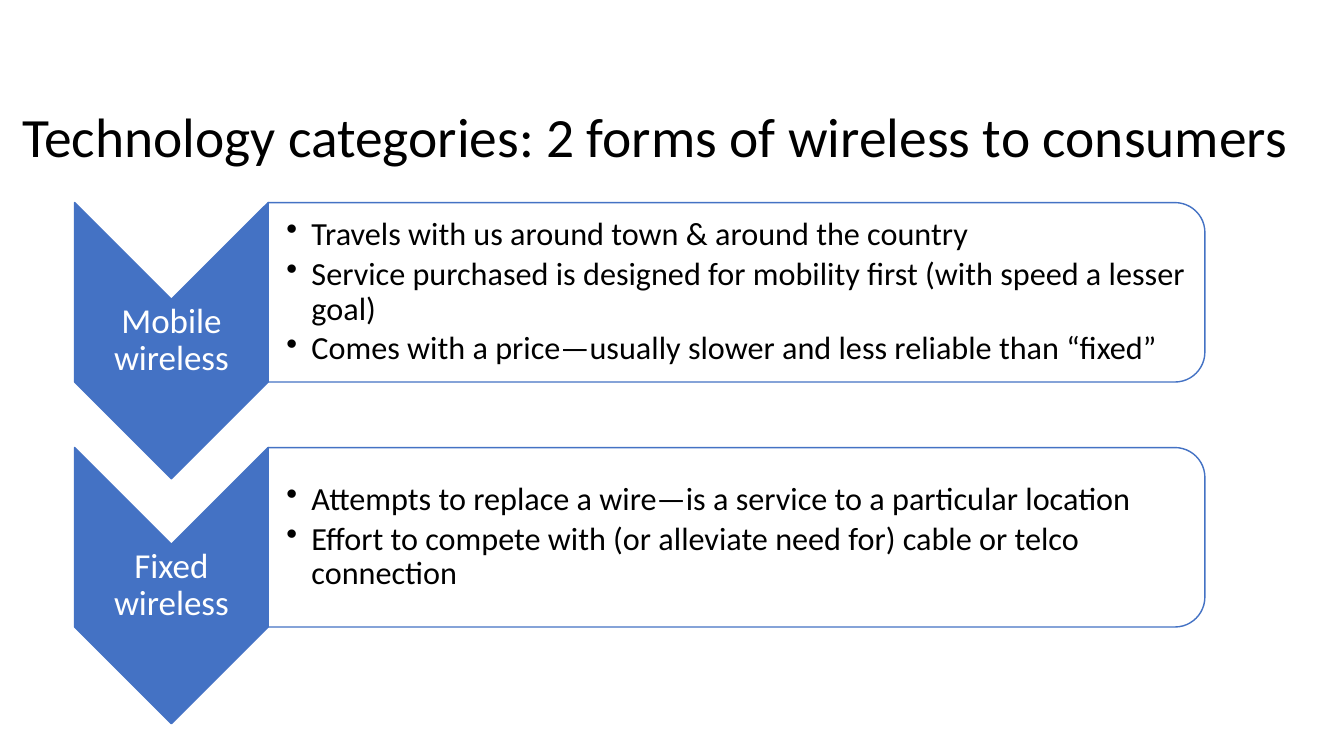
import dataclasses

import lxml.etree
import pptx
import pptx.dml.color
import pptx.enum.shapes
import pptx.enum.text
import pptx.oxml.ns
import pptx.util

Inches = pptx.util.Inches
Pt = pptx.util.Pt
RGB = pptx.dml.color.RGBColor
SHAPE = pptx.enum.shapes.MSO_SHAPE
ALIGN = pptx.enum.text.PP_ALIGN
qn = pptx.oxml.ns.qn


@dataclasses.dataclass(frozen=True)
class Theme:
    font: str = "Calibri"
    accent: RGB = RGB(0x44, 0x72, 0xC4)
    white: RGB = RGB(0xFF, 0xFF, 0xFF)
    black: RGB = RGB(0, 0, 0)
    title: float = 39.6
    label: float = 25
    body: float = 23


THEME = Theme()
TITLE = "Technology categories: 2 forms of wireless to consumers"
CATEGORIES = [
    ("Mobile wireless", [
        "Travels with us around town & around the country",
        "Service purchased is designed for mobility first (with speed a lesser goal)",
        "Comes with a price—usually slower and less reliable than “fixed”",
    ]),
    ("Fixed wireless", [
        "Attempts to replace a wire—is a service to a particular location",
        "Effort to compete with (or alleviate need for) cable or telco connection",
    ]),
]
CHEVRON_W, CHEVRON_H = 1.92, 2.74
PANEL_W, PANEL_H = 9.29, 1.78
ROW_PITCH = 2.43


def set_format(obj, values):
    for name, value in values.items():
        setattr(obj, name, value)


def write_text(tf, lines, size, color, align, space_after=0, left_inset=0.02):
    """Fill a middle-anchored frame with one paragraph per line."""
    inset = Inches(0.02)
    set_format(tf, {
        "word_wrap": True, "vertical_anchor": pptx.enum.text.MSO_ANCHOR.MIDDLE,
        "margin_left": Inches(left_inset), "margin_right": inset,
        "margin_top": inset, "margin_bottom": inset,
    })
    for i, line in enumerate(lines):
        p = tf.paragraphs[0] if i == 0 else tf.add_paragraph()
        set_format(p, {"alignment": align, "line_spacing": 0.9,
                       "space_before": Pt(0), "space_after": Pt(space_after)})
        r = p.add_run()
        r.text = line
        set_format(r.font, {"name": THEME.font, "size": Pt(size)})
        r.font.color.rgb = color


def add_bullets(tf):
    for p in tf.paragraphs:
        p.level = 1
        pPr = p._p.get_or_add_pPr()
        pPr.set("marL", str(Inches(0.25)))
        pPr.set("indent", str(-Inches(0.25)))
        lxml.etree.SubElement(pPr, qn("a:buChar"), char="•")


def add_turned_shape(shapes, kind, left, top, width, height, fill):
    """Add a shape turned a quarter clockwise that covers the given box."""
    shift = (width - height) / 2
    sp = shapes.add_shape(kind, Inches(left + shift), Inches(top - shift),
                          Inches(height), Inches(width))
    sp.rotation = 90
    sp.shadow.inherit = False
    sp.fill.solid()
    sp.fill.fore_color.rgb = fill
    sp.line.color.rgb = THEME.accent
    sp.line.width = Pt(1)
    return sp


def add_title(s, left, top, width, height):
    sp = s.shapes.title
    set_format(sp, {"left": Inches(left), "top": Inches(top),
                    "width": Inches(width), "height": Inches(height)})
    write_text(sp.text_frame, [TITLE], THEME.title, THEME.black, ALIGN.LEFT,
               left_inset=0.1)


def add_category(s, left, top, label, bullets):
    shapes = s.shapes.add_group_shape().shapes
    add_turned_shape(shapes, SHAPE.CHEVRON, left, top, CHEVRON_W, CHEVRON_H,
                     THEME.accent)
    notch = CHEVRON_W / 2
    tb = shapes.add_textbox(Inches(left), Inches(top + notch), Inches(CHEVRON_W),
                            Inches(CHEVRON_H - 2 * notch))
    write_text(tb.text_frame, [label], THEME.label, THEME.white, ALIGN.CENTER)

    panel_left = left + CHEVRON_W
    panel = add_turned_shape(shapes, SHAPE.ROUND_2_SAME_RECTANGLE, panel_left, top,
                             PANEL_W, PANEL_H, THEME.white)
    color = panel.fill._xPr.find(qn("a:solidFill"))[0]
    lxml.etree.SubElement(color, qn("a:alpha"), val="90000")
    corner = 0.09
    tb = shapes.add_textbox(Inches(panel_left), Inches(top + corner),
                            Inches(PANEL_W - corner), Inches(PANEL_H - 2 * corner))
    write_text(tb.text_frame, bullets, THEME.body, THEME.black, ALIGN.LEFT,
               space_after=3.5, left_inset=0.18)
    add_bullets(tb.text_frame)


def main():
    prs = pptx.Presentation()
    prs.slide_width, prs.slide_height = Inches(13.33), Inches(7.5)
    s = prs.slides.add_slide(prs.slide_layouts[5])
    add_title(s, 0.12, 0.76, 13.07, 1.25)
    for i, (label, bullets) in enumerate(CATEGORIES):
        add_category(s, 0.74, 2.01 + i * ROW_PITCH, label, bullets)
    prs.save("out.pptx")


if __name__ == "__main__":
    main()
